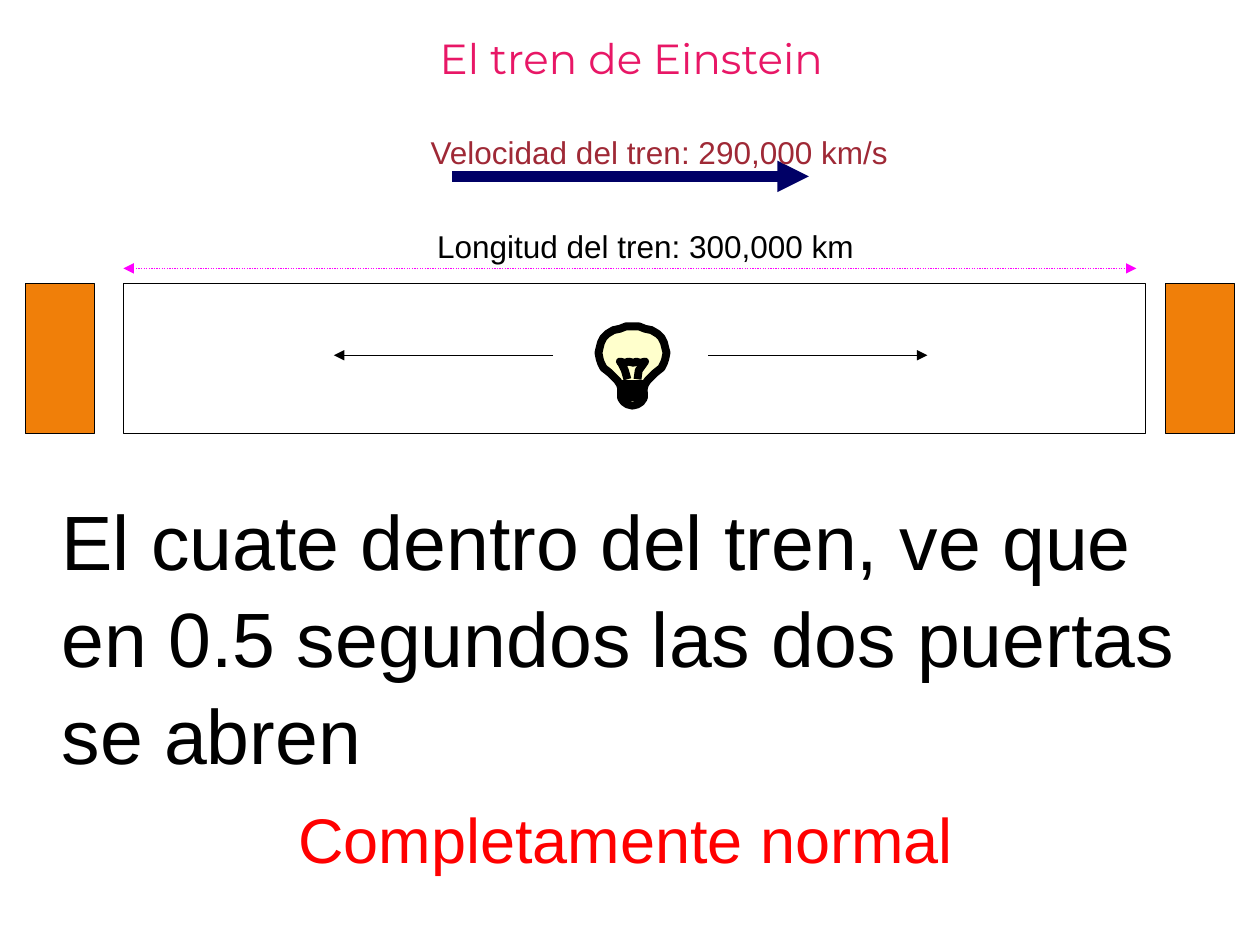
from pptx import Presentation
from pptx.dml.color import RGBColor
from pptx.enum.dml import MSO_LINE
from pptx.enum.shapes import MSO_CONNECTOR, MSO_SHAPE
from pptx.enum.text import PP_ALIGN
from pptx.oxml.ns import qn
from pptx.util import Inches, Pt
from lxml import etree

BLACK = "000000"

# Right half of the bulb outline, from top to base, as offsets from its top centre
BULB_HALF = [(0, 0), (0.05, 0), (0.1, 0.02), (0.15, 0.03), (0.2, 0.06),
             (0.23, 0.09), (0.25, 0.13), (0.26, 0.17), (0.27, 0.21),
             (0.26, 0.26), (0.25, 0.29), (0.23, 0.33), (0.18, 0.37),
             (0.12, 0.43), (0.1, 0.46), (0.09, 0.49), (0.09, 0.57),
             (0.07, 0.6), (0.04, 0.62), (0, 0.63)]
FILAMENT = [(-0.04, 0.42), (-0.06, 0.35), (-0.09, 0.29), (-0.1, 0.28),
            (-0.06, 0.29), (-0.03, 0.28), (0.01, 0.29), (0.03, 0.28),
            (0.06, 0.29), (0.1, 0.28), (0.05, 0.35), (0.04, 0.42)]
SCREW = [(-0.09, 0.46), (0.09, 0.46), (0.09, 0.49), (-0.09, 0.49),
         (-0.09, 0.53), (0.09, 0.53), (0.09, 0.56), (-0.09, 0.56)]


def rgb(value):
    return RGBColor.from_string(value)


def paint(sp, fill=None, line=BLACK, width=0.75):
    sp.shadow.inherit = False
    if fill:
        sp.fill.solid()
        sp.fill.fore_color.rgb = rgb(fill)
    else:
        sp.fill.background()
    sp.line.color.rgb = rgb(line)
    sp.line.width = Pt(width)


def add_text(s, box, text, size, color, name="Arial", wrap=False,
             align=PP_ALIGN.LEFT, spacing=1.05):
    tf = s.shapes.add_textbox(*map(Inches, box)).text_frame
    tf.word_wrap = wrap
    p = tf.paragraphs[0]
    p.alignment = align
    p.line_spacing = spacing
    r = p.add_run()
    r.text = text
    for key, value in {"name": name, "size": Pt(size)}.items():
        setattr(r.font, key, value)
    r.font.color.rgb = rgb(color)


def add_arrow(s, x1, x2, y, color=BLACK, width=0.75, both=False, dash=None):
    cx = s.shapes.add_connector(MSO_CONNECTOR.STRAIGHT, Inches(x1), Inches(y),
                                Inches(x2), Inches(y))
    cx.line.color.rgb = rgb(color)
    cx.line.width = Pt(width)
    if dash:
        cx.line.dash_style = dash
    ln = cx.line._get_or_add_ln()
    for end in ("a:headEnd", "a:tailEnd") if both else ("a:tailEnd",):
        etree.SubElement(ln, qn(end)).set("type", "triangle")
    etree.SubElement(cx._element.spPr, qn("a:effectLst"))


def add_rect(s, box, fill=None):
    paint(s.shapes.add_shape(MSO_SHAPE.RECTANGLE, *map(Inches, box)), fill)


def add_path(s, cx, top, points, fill=None, close=False):
    pts = [(Inches(cx + dx), Inches(top + dy)) for dx, dy in points]
    fb = s.shapes.build_freeform(*pts[0])
    fb.add_line_segments(pts[1:], close=close)
    paint(fb.convert_to_shape(), fill, width=4.5)


def add_bulb(s, cx, top):
    mirrored = [(-dx, dy) for dx, dy in BULB_HALF[-2:0:-1]]
    add_path(s, cx, top, BULB_HALF + mirrored, "FFFFCC", close=True)
    add_path(s, cx, top, FILAMENT)
    add_path(s, cx, top, SCREW)


def add_train(s, x, y, w, h):
    # Carriage with the bulb and its two light rays
    add_rect(s, (x, y, w, h))
    add_bulb(s, 5.02, y + 0.34)
    for start, end in ((5.62, 7.36), (4.39, 2.65)):
        add_arrow(s, start, end, y + 0.57)

    # Doors
    for door_x in (x + w + 0.16, x - 0.78):
        add_rect(s, (door_x, y, 0.55, h), "F07F09")

    # Speed and length
    add_arrow(s, 3.59, 6.42, y - 0.85, "000066", 6)
    add_text(s, (3.32, y - 1.26, 3.84, 0.4),
             "Velocidad del tren: 290,000 km/s", 18, "9F2936")
    add_arrow(s, x, x + w - 0.07, y - 0.12, "FF00FF", both=True,
              dash=MSO_LINE.ROUND_DOT)
    add_text(s, (3.37, y - 0.51, 3.51, 0.4),
             "Longitud del tren: 300,000 km", 18, BLACK)


def add_conclusion(s, x, y, w, h):
    add_text(s, (x, y, w, h),
             "El cuate dentro del tren, ve que en 0.5 segundos las dos puertas "
             "se abren", 44, BLACK, wrap=True)
    add_text(s, (x + 1.88, y + h + 0.13, 5.45, 0.71),
             "Completamente normal", 36, "FF0000")


def main():
    prs = Presentation()
    prs.slide_width, prs.slide_height = Inches(10), Inches(7.5)
    s = prs.slides.add_slide(prs.slide_layouts[6])
    add_text(s, (0.46, 0.21, 9.1, 0.57), "El tren de Einstein", 24, "E81766",
             name="Montserrat", align=PP_ALIGN.CENTER, spacing=1.0)
    add_train(s, 0.98, 2.25, 8.11, 1.19)
    add_conclusion(s, 0.39, 3.83, 9.38, 2.31)
    prs.save("out.pptx")


if __name__ == "__main__":
    main()
